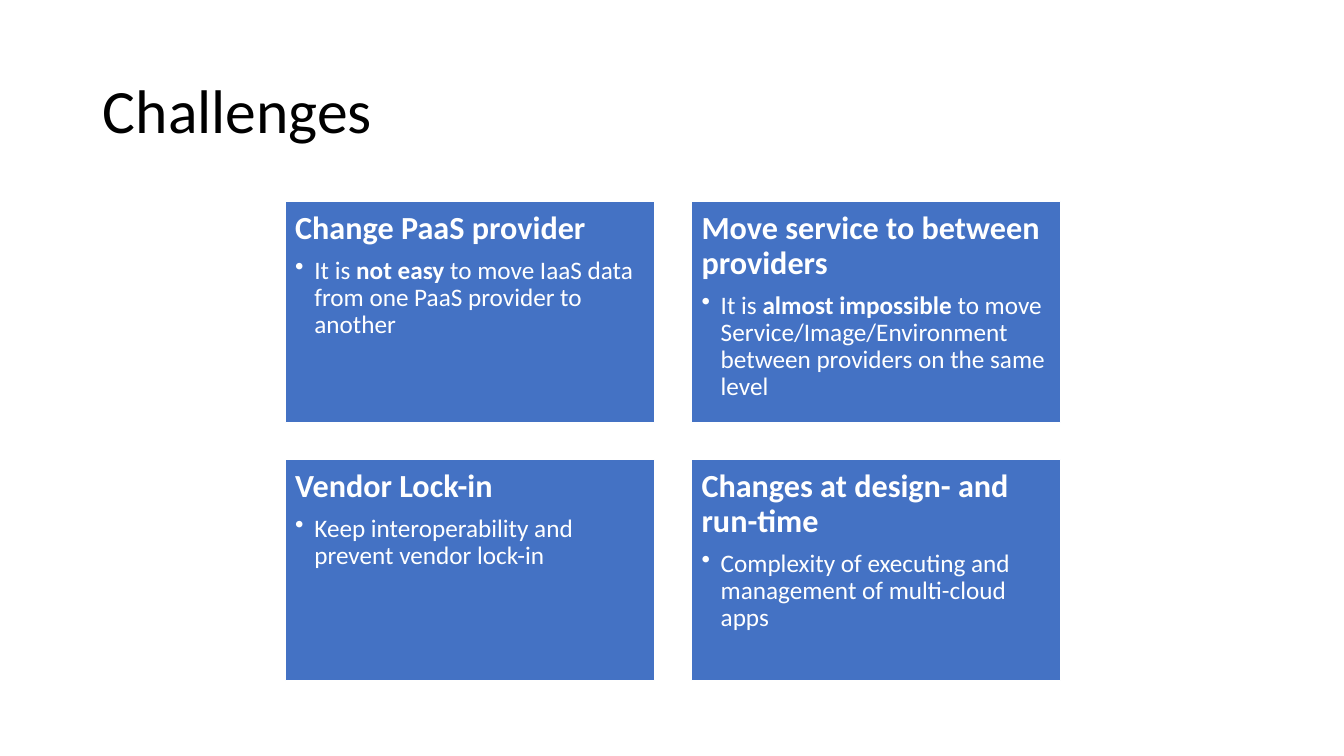
from lxml import etree
from pptx import Presentation, util as u
from pptx.dml.color import RGBColor
from pptx.enum import shapes, text
from pptx.oxml import ns

BLUE = RGBColor(0x44, 0x72, 0xC4)
WHITE = RGBColor(0xFF, 0xFF, 0xFF)
BLACK = RGBColor(0x00, 0x00, 0x00)

LEFT, TOP = 2.83, 2
WIDTH, HEIGHT = 3.66, 2.19
GAP = 0.37
COLUMNS = 2

CHALLENGES = [
    ("Change PaaS provider",
     ["It is ", "not easy", " to move IaaS data from one PaaS provider to another"]),
    ("Move service to between providers",
     ["It is ", "almost impossible ",
      "to move Service/Image/Environment between providers on the same level"]),
    ("Vendor Lock-in", ["Keep interoperability and prevent vendor lock-in"]),
    ("Changes at design- and run-time",
     ["Complexity of executing and management of multi-cloud apps"]),
]


def add_run(p, words, size, color, bold=False):
    r = p.add_run()
    r.text = words
    r.font.name = "Calibri"
    r.font.size = u.Pt(size)
    r.font.bold = bold
    r.font.color.rgb = color


def format_paragraph(p, after):
    p.alignment = text.PP_ALIGN.LEFT
    p.line_spacing = 0.9
    p.space_after = u.Pt(after)


prs = Presentation()
prs.slide_width, prs.slide_height = u.Inches(13.33), u.Inches(7.5)
s = prs.slides.add_slide(prs.slide_layouts[5])

title = s.shapes.title
title.left, title.top = u.Inches(0.92), u.Inches(0.4)
title.width, title.height = u.Inches(11.5), u.Inches(1.45)
title.text_frame.vertical_anchor = text.MSO_ANCHOR.MIDDLE
p = title.text_frame.paragraphs[0]
format_paragraph(p, 0)
add_run(p, "Challenges", 44, BLACK)

for i, (heading, parts) in enumerate(CHALLENGES):
    row, column = divmod(i, COLUMNS)
    sp = s.shapes.add_shape(
        shapes.MSO_SHAPE.RECTANGLE,
        u.Inches(LEFT + column * (WIDTH + GAP)), u.Inches(TOP + row * (HEIGHT + GAP)),
        u.Inches(WIDTH), u.Inches(HEIGHT))
    sp.shadow.inherit = False
    sp.fill.solid()
    sp.fill.fore_color.rgb = BLUE
    sp.line.color.rgb = WHITE
    sp.line.width = u.Pt(1)

    tf = sp.text_frame
    tf.word_wrap = True
    tf.vertical_anchor = text.MSO_ANCHOR.TOP
    tf.margin_left = tf.margin_right = tf.margin_top = tf.margin_bottom = u.Inches(0.1)

    p = tf.paragraphs[0]
    format_paragraph(p, 8)
    add_run(p, heading, 23, WHITE, True)

    p = tf.add_paragraph()
    p.level = 1
    format_paragraph(p, 3)
    pPr = p._p.get_or_add_pPr()
    pPr.set("marL", str(u.Inches(0.19)))
    pPr.set("indent", str(-u.Inches(0.19)))
    etree.SubElement(pPr, ns.qn("a:buChar")).set("char", "•")
    for j, words in enumerate(parts):
        add_run(p, words, 18, WHITE, j == 1)

prs.save("out.pptx")
